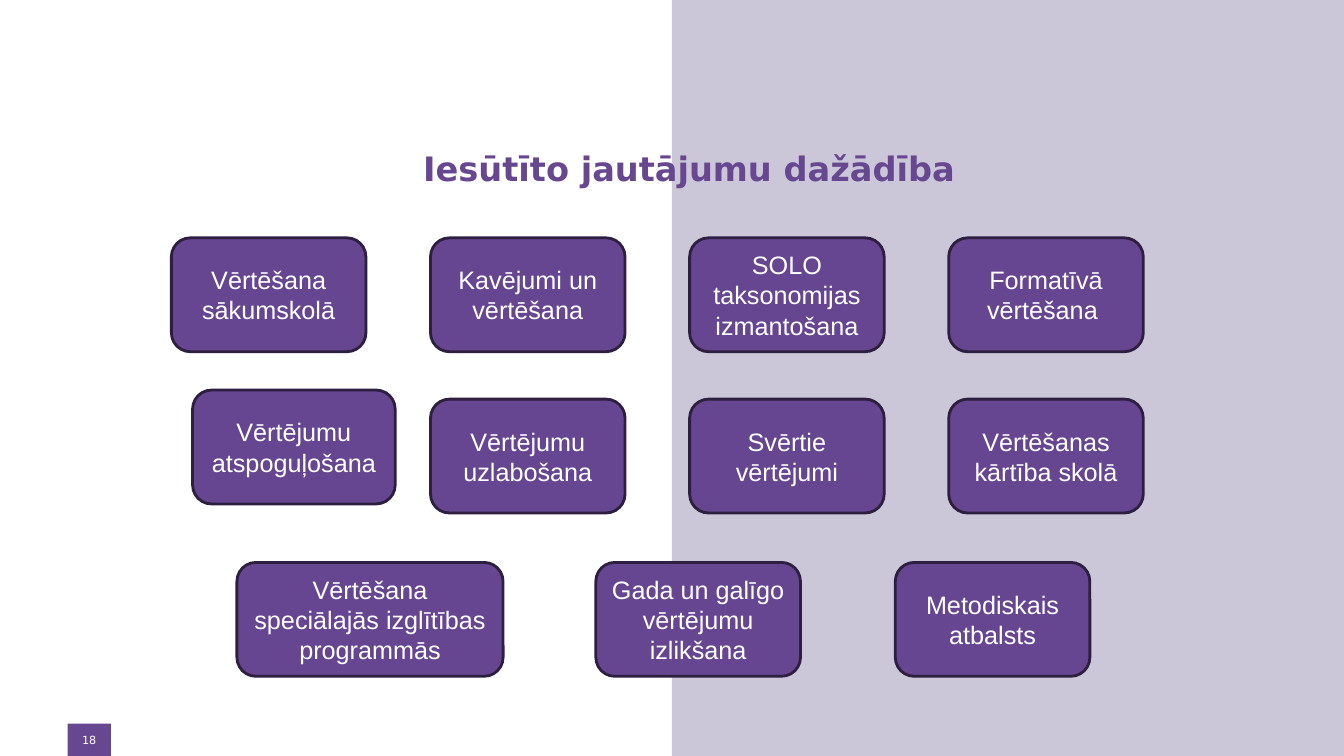
from dataclasses import dataclass

import pptx
import pptx.dml.color
import pptx.enum.shapes
import pptx.enum.text
import pptx.util

Inches = pptx.util.Inches
RGBColor = pptx.dml.color.RGBColor
Shape = pptx.enum.shapes.MSO_SHAPE
Anchor = pptx.enum.text.MSO_ANCHOR

WHITE = RGBColor(0xFF, 0xFF, 0xFF)
LILAC = RGBColor(0xCB, 0xC7, 0xD8)
VIOLET = RGBColor(0x66, 0x47, 0x90)
PURPLE = RGBColor(0x66, 0x46, 0x90)
DARK = RGBColor(0x2D, 0x1F, 0x3F)

WIDTH, HEIGHT = 13.33, 7.5
CARD_W, CARD_H = 1.93, 1.13
LEFT, STEP = 1.7, 2.57
TOP, MIDDLE, BOTTOM = 2.36, 3.96, 5.58


@dataclass
class Card:
    text: str
    left: float
    top: float
    width: float = CARD_W


def make_row(texts: list[str], top: float, first: int = 0) -> list[Card]:
    return [Card(text, LEFT + STEP * col, top) for col, text in enumerate(texts, first)]


CARDS = [
    *make_row(
        ["Vērtēšana sākumskolā", "Kavējumi un vērtēšana",
         "SOLO taksonomijas izmantošana", "Formatīvā vērtēšana "],
        TOP,
    ),
    Card("Vērtējumu atspoguļošana", 1.91, 3.87, 2.01),
    *make_row(
        ["Vērtējumu uzlabošana", "Svērtie vērtējumi", "Vērtēšanas kārtība skolā"],
        MIDDLE, first=1,
    ),
    Card("Vērtēšana speciālajās izglītības programmās", 2.35, BOTTOM, 2.64),
    Card("Gada un galīgo vērtējumu izlikšana", 5.91, BOTTOM, 2.03),
    Card("Metodiskais atbalsts", 8.88, BOTTOM),
]


def write(shape, text: str, *, size: float, color: RGBColor = WHITE,
          font: str = "DejaVu Sans", bold: bool = False,
          anchor=Anchor.MIDDLE, side: float = 0.1, edge: float = 0.05) -> None:
    frame = shape.text_frame
    frame.word_wrap = True
    frame.vertical_anchor = anchor
    frame.margin_left = frame.margin_right = Inches(side)
    frame.margin_top = frame.margin_bottom = Inches(edge)
    para = frame.paragraphs[0]
    para.alignment = pptx.enum.text.PP_ALIGN.CENTER
    run = para.add_run()
    run.text = text
    run.font.size = pptx.util.Pt(size)
    run.font.name = font
    run.font.bold = bold
    run.font.color.rgb = color


def add_box(slide, kind, left: float, top: float, width: float, height: float,
            fill: RGBColor, line: RGBColor | None = None):
    box = slide.shapes.add_shape(
        kind, Inches(left), Inches(top), Inches(width), Inches(height))
    box.shadow.inherit = False
    box.fill.solid()
    box.fill.fore_color.rgb = fill
    if line is None:
        box.line.fill.background()
    else:
        box.line.color.rgb = line
        box.line.width = pptx.util.Pt(2)
    return box


def draw_card(slide, card: Card) -> None:
    box = add_box(slide, Shape.ROUNDED_RECTANGLE, card.left, card.top,
                  card.width, CARD_H, PURPLE, DARK)
    write(box, card.text, size=18, font="Arial")


def main() -> None:
    deck = pptx.Presentation()
    deck.slide_width, deck.slide_height = Inches(WIDTH), Inches(HEIGHT)
    slide = deck.slides.add_slide(deck.slide_layouts[6])

    add_box(slide, Shape.RECTANGLE, WIDTH / 2, 0, WIDTH / 2, HEIGHT, LILAC)
    number = add_box(slide, Shape.RECTANGLE, 0.67, 7.18, 0.43, 0.32, VIOLET)
    write(number, "18", size=8, side=0.04, edge=0.04)

    title = slide.shapes.add_textbox(
        Inches(1.92), Inches(1.42), Inches(9.83), Inches(0.5))
    write(title, "Iesūtīto jautājumu dažādība", size=24, color=VIOLET,
          bold=True, anchor=Anchor.TOP, side=0)

    for card in CARDS:
        draw_card(slide, card)
    deck.save("out.pptx")


if __name__ == "__main__":
    main()
